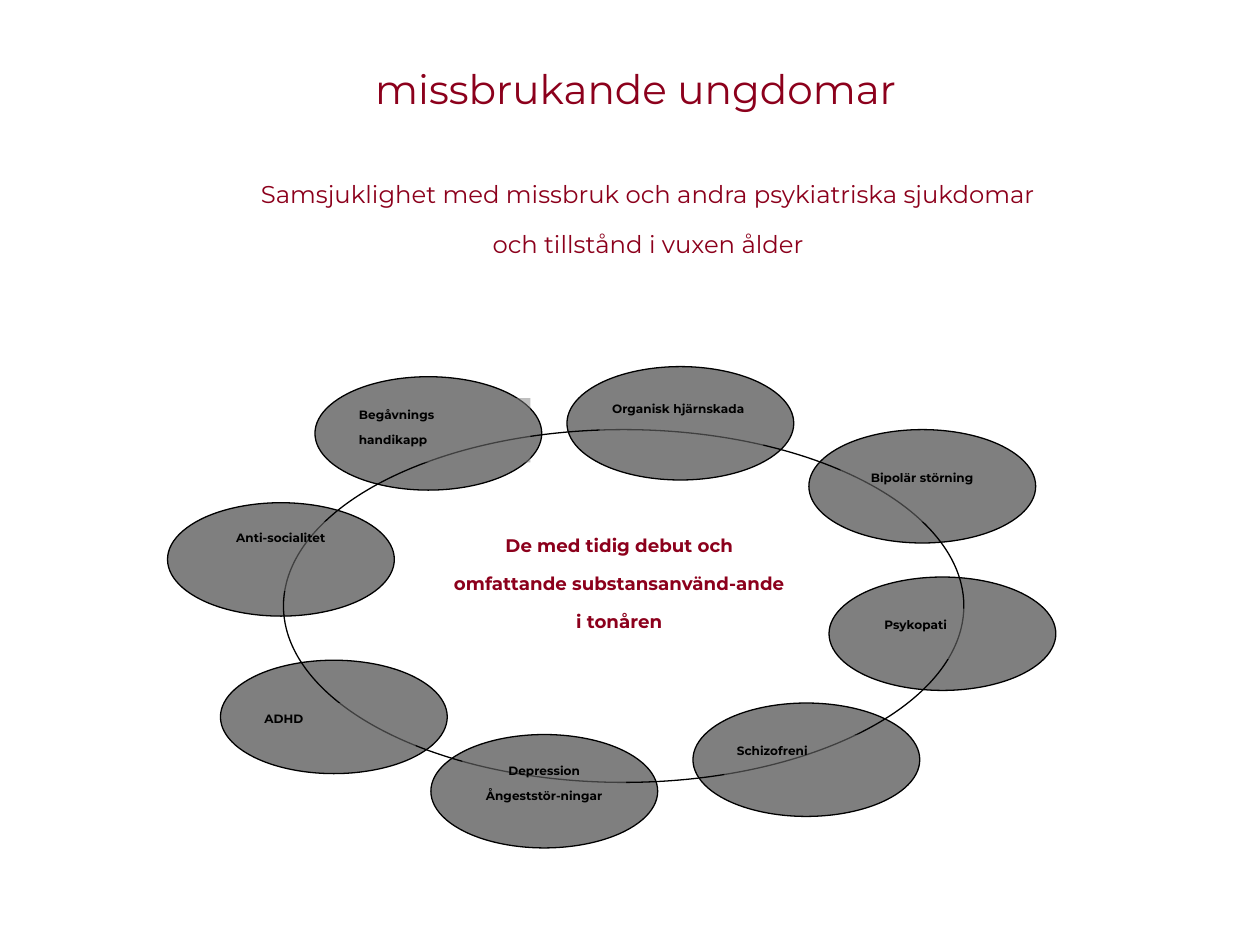
from dataclasses import dataclass

import lxml.etree
import pptx
import pptx.dml.color
import pptx.enum.shapes
import pptx.enum.text
import pptx.oxml.ns
import pptx.util

Inches = pptx.util.Inches
Align = pptx.enum.text.PP_ALIGN
Preset = pptx.enum.shapes.MSO_SHAPE
qn = pptx.oxml.ns.qn

WINE, BLACK, GREY, WHITE = "8C001C", "000000", "808080", "FFFFFF"
Box = tuple[float, float, float, float]


@dataclass
class Condition:
    text: str
    oval_at: tuple[float, float]
    label_at: tuple[float, float]
    label_size: tuple[float, float] = (1.3, 0.4)
    align: Align = Align.LEFT


CONDITIONS = [
    Condition("Begåvnings\nhandikapp", (2.5, 2.99), (2.75, 3.16), (1.46, 0.51)),
    Condition("Anti-socialitet", (1.33, 3.99), (1.58, 4.14), (1.3, 0.55), Align.CENTER),
    Condition("ADHD", (1.75, 5.24), (2, 5.58)),
    Condition("Depression\nÅngeststör-ningar", (3.42, 5.83), (3.67, 5.99), (1.3, 0.51), Align.CENTER),
    Condition("Schizofreni", (5.5, 5.58), (5.75, 5.83)),
    Condition("Organisk hjärnskada", (4.5, 2.91), (4.76, 3.12), (1.3, 0.47)),
    Condition("Bipolär störning", (6.42, 3.41), (6.67, 3.66), (1.3, 0.48), Align.CENTER),
    Condition("Psykopati", (6.58, 4.58), (6.92, 4.83)),
]


def rgb(color: str) -> pptx.dml.color.RGBColor:
    return pptx.dml.color.RGBColor.from_string(color)


def write(frame, text: str, size: float, color: str, bold: bool = False,
          align: Align = Align.CENTER, anchor=pptx.enum.text.MSO_ANCHOR.TOP) -> None:
    frame.text = text
    frame.word_wrap = True
    frame.vertical_anchor = anchor
    for paragraph in frame.paragraphs:
        paragraph.alignment = align
        for run in paragraph.runs:
            run.font.name = "Montserrat"
            run.font.size = pptx.util.Pt(size)
            run.font.bold = bold
            run.font.color.rgb = rgb(color)
            run.font._element.set("baseline", "30000")


def add_translucent(slide, preset: Preset, box: Box, color: str, outlined: bool):
    shape = slide.shapes.add_shape(preset, *map(Inches, box))
    shape.shadow.inherit = False
    shape.fill.solid()
    shape.fill.fore_color.rgb = rgb(color)
    solid = shape._element.spPr.find(qn("a:solidFill"))
    lxml.etree.SubElement(solid[0], qn("a:alpha"), val="50000")
    if outlined:
        shape.line.color.rgb = rgb(BLACK)
        shape.line.width = pptx.util.Pt(0.75)
    else:
        shape.line.fill.background()
    return shape


def add_text_shadow(run) -> None:
    effects = lxml.etree.Element(qn("a:effectLst"))
    shadow = lxml.etree.SubElement(effects, qn("a:outerShdw"),
                                   blurRad="38100", dist="38100", dir="2700000")
    lxml.etree.SubElement(shadow, qn("a:srgbClr"), val="C0C0C0")
    run.font._element.find(qn("a:solidFill")).addnext(effects)


def add_condition(slide, condition: Condition) -> None:
    add_translucent(slide, Preset.OVAL, (*condition.oval_at, 1.8, 0.9), BLACK, True)
    label = add_translucent(slide, Preset.RECTANGLE,
                            (*condition.label_at, *condition.label_size), GREY, False)
    write(label.text_frame, condition.text, 12, BLACK, True, condition.align)


def main() -> None:
    presentation = pptx.Presentation()
    presentation.slide_width, presentation.slide_height = Inches(10), Inches(7.5)
    slide = presentation.slides.add_slide(presentation.slide_layouts[5])

    heading = slide.shapes.title
    heading.left, heading.top, heading.width, heading.height = map(Inches, (0.67, 0.41, 8.75, 0.75))
    write(heading.text_frame, "missbrukande ungdomar", 40, WINE,
          anchor=pptx.enum.text.MSO_ANCHOR.BOTTOM)
    heading.text_frame.auto_size = pptx.enum.text.MSO_AUTO_SIZE.NONE
    add_text_shadow(heading.text_frame.paragraphs[0].runs[0])

    subheading = slide.shapes.add_textbox(*map(Inches, (1.83, 1.33, 6.63, 1.31)))
    write(subheading.text_frame,
          "Samsjuklighet med missbruk och andra psykiatriska sjukdomar "
          "och tillstånd i vuxen ålder", 24, WINE)

    add_translucent(slide, Preset.OVAL, (2.25, 3.41, 5.4, 2.8), WHITE, True)
    core_group = add_translucent(slide, Preset.RECTANGLE, (3.5, 4.16, 2.83, 1.08), WHITE, False)
    write(core_group.text_frame,
          "De med tidig debut och omfattande substansanvänd-ande i tonåren", 18, WINE, True)

    for condition in CONDITIONS:
        add_condition(slide, condition)

    presentation.save("out.pptx")


if __name__ == "__main__":
    main()
